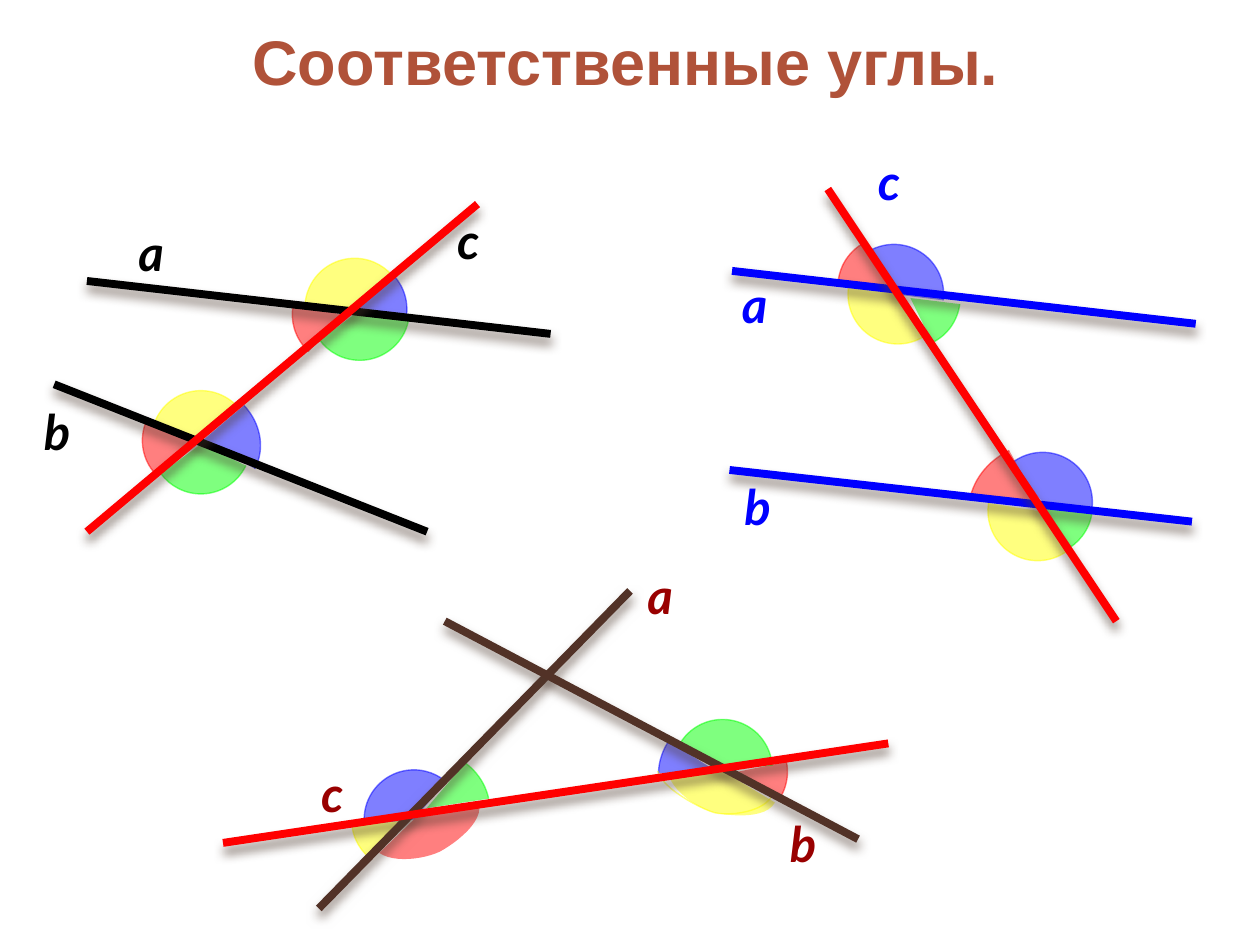
from lxml.etree import SubElement
from pptx import Presentation
from pptx.dml.color import RGBColor
from pptx.enum.shapes import MSO_CONNECTOR as CONNECTOR, MSO_SHAPE as SHAPE
from pptx.enum.text import MSO_ANCHOR as ANCHOR, MSO_AUTO_SIZE as AUTO_SIZE, PP_ALIGN as ALIGN
from pptx.oxml.ns import qn
from pptx.util import Inches, Pt

COLORS = {
    "title": "B05239", "shadow": "4E3B30", "black": "000000", "red": "FF0000",
    "blue": "0000FF", "green": "00FF00", "yellow": "FFFF00",
    "brown": "523227", "maroon": "990000",
}
LABEL_FONT = {"name": "Lato", "size": Pt(28), "bold": True, "italic": True}
TITLE_FONT = {"name": "Arial", "size": Pt(36), "bold": True, "italic": False}
WEDGE = 0.79  # usual diameter of an angle mark


def color(name):
    return RGBColor.from_string(COLORS[name])


def curve(start, *segments, steps=12):
    """Points along a chain of cubic Bezier segments."""
    points = [start]
    for first, second, end in segments:
        origin = points[-1]
        for step in range(1, steps + 1):
            t = step / steps
            weights = ((1 - t) ** 3, 3 * t * (1 - t) ** 2, 3 * t * t * (1 - t), t ** 3)
            corners = (origin, first, second, end)
            points.append(tuple(sum(w * c[axis] for w, c in zip(weights, corners))
                                for axis in (0, 1)))
    return points


class AngleSlide:
    def __init__(self, presentation):
        self.slide = presentation.slides.add_slide(presentation.slide_layouts[5])
        self.shapes = self.slide.shapes

    def format_text(self, frame, text, font, color_name):
        frame.text = text
        run = frame.paragraphs[0].runs[0]
        for name, value in font.items():
            setattr(run.font, name, value)
        run.font.color.rgb = color(color_name)

    def title(self, text, left, top, width, height):
        shape = self.shapes.title
        box = {"left": left, "top": top, "width": width, "height": height}
        for name, value in box.items():
            setattr(shape, name, Inches(value))
        frame = shape.text_frame
        self.format_text(frame, text, TITLE_FONT, "title")
        layout = {"word_wrap": False, "auto_size": AUTO_SIZE.NONE,
                  "vertical_anchor": ANCHOR.TOP}
        for name, value in layout.items():
            setattr(frame, name, value)
        frame.paragraphs[0].alignment = ALIGN.CENTER

    def make_translucent(self, shape):
        for element in list(shape._element.spPr.iter(qn("a:srgbClr"))):
            SubElement(element, qn("a:alpha"), val="50000")

    def wedge(self, color_name, left, top, rotation, start, end, width=WEDGE, height=WEDGE):
        shape = self.shapes.add_shape(SHAPE.ARC, Inches(left), Inches(top),
                                      Inches(width), Inches(height))
        shape.adjustments[0], shape.adjustments[1] = start, end
        shape.rotation = rotation
        shape.shadow.inherit = False
        shape.fill.solid()
        shape.fill.fore_color.rgb = color(color_name)
        shape.line.color.rgb = color(color_name)
        shape.line.width = Pt(0.79)
        self.make_translucent(shape)

    def freeform(self, color_name, points, filled=True):
        start, *others = [(Inches(x), Inches(y)) for x, y in points]
        builder = self.shapes.build_freeform(*start)
        builder.add_line_segments(others, close=filled)
        shape = builder.convert_to_shape()
        shape.shadow.inherit = False
        if filled:
            shape.fill.solid()
            shape.fill.fore_color.rgb = color(color_name)
            shape.line.fill.background()
        else:
            shape.fill.background()
            shape.line.color.rgb = color(color_name)
            shape.line.width = Pt(0.79)
        self.make_translucent(shape)

    def line(self, color_name, *ends):
        connector = self.shapes.add_connector(CONNECTOR.STRAIGHT, *map(Inches, ends))
        connector.line.color.rgb = color(color_name)
        connector.line.width = Pt(4.5)
        effects = SubElement(connector._element.spPr, qn("a:effectLst"))
        shadow = SubElement(effects, qn("a:outerShdw"), blurRad=str(Pt(6)), dist=str(Pt(4)),
                            dir="5400000", rotWithShape="0")
        tint = SubElement(shadow, qn("a:srgbClr"), val=COLORS["shadow"])
        SubElement(tint, qn("a:alpha"), val="60000")

    def label(self, text, color_name, left, top):
        width = 0.36 if text == "c" else 0.41
        shape = self.shapes.add_textbox(Inches(left), Inches(top), Inches(width), Inches(0.57))
        frame = shape.text_frame
        frame.word_wrap = False
        frame.auto_size = AUTO_SIZE.SHAPE_TO_FIT_TEXT
        self.format_text(frame, text, LABEL_FONT, color_name)


# Angle marks: colour, left, top, rotation, start, end, then any special size
WEDGES = [
    # bottom figure
    ("yellow", 2.79, 6.11, 186.2, 182.63, 208.23),
    ("red", 5.46, 5.73, 56.9, 175.02, 200.61),
    ("blue", 2.89, 6.11, 283.3, 150.57, 16.08),
    ("green", 5.34, 5.71, 317.2, 148.98, 23.23),
    ("blue", 5.24, 5.65, 227.8, 185.98, 206.59, 0.89, 0.94),
    ("green", 2.88, 5.95, 11.5, 179.52, 203.85, 1.01, 0.93),
    # right figure
    ("red", 6.65, 1.88, 264.8, 167.17, 201.64),
    ("blue", 6.7, 1.94, 348, 150.57, 11.49),
    ("yellow", 7.84, 3.66, 162.3, 150.57, 16.08),
    ("green", 7.88, 3.62, 97.2, 160.73, 196.03),
    ("blue", 7.88, 3.59, 335.7, 152.01, 17.9),
    ("yellow", 6.73, 1.94, 166.8, 151.64, 16.83),
    ("red", 7.75, 3.45, 254.9, 174.57, 207.77, 1.01, 1.14),
    ("green", 6.83, 1.97, 73.9, 175.87, 209.95),
    # left figure
    ("red", 1.13, 3.1, 206.1, 173.83, 215.17),
    ("green", 1.2, 3.13, 116.9, 161.21, 16.08),
    ("yellow", 2.42, 2.05, 292.6, 151.5, 16.08),
    ("blue", 2.44, 2.06, 20.4, 176.52, 208.03),
    ("blue", 1.14, 3.07, 32.4, 172.36, 213.79, 0.94, 0.85),
    ("red", 2.32, 2.1, 193.7, 178.82, 213.79),
    ("yellow", 1.2, 3.1, 297.9, 159.54, 9.95),
    ("green", 2.46, 2.07, 116.9, 150.57, 16.08),
]
RED_SECTOR = curve((3.8, 6.38), ((3.84, 6.52), (3.62, 6.69), (3.49, 6.76)),
                   ((3.36, 6.82), (3.13, 6.85), (3.01, 6.77))) + [(3.31, 6.48)]
YELLOW_SECTOR = curve((6.15, 6.37), ((6.08, 6.5), (5.81, 6.48), (5.67, 6.45)),
                      ((5.52, 6.41), (5.33, 6.27), (5.3, 6.13))) + [(5.72, 6.11)]
YELLOW_EDGE = curve((6.13, 6.31), ((6.07, 6.44), (5.81, 6.48), (5.67, 6.45)),
                    ((5.54, 6.41), (5.25, 6.25), (5.22, 6.12)))
# Lines a, b and the transversal c of each figure
LINES = [
    ("black", 0.69, 2.23, 4.37, 2.65),
    ("black", 0.43, 3.05, 3.39, 4.22),
    ("red", 0.69, 4.22, 3.79, 1.62),
    ("blue", 5.81, 2.15, 9.49, 2.57),
    ("blue", 5.79, 3.73, 9.46, 4.14),
    ("red", 6.57, 1.5, 8.86, 4.93),
    ("brown", 2.53, 7.21, 5, 4.69),
    ("brown", 3.53, 4.93, 6.81, 6.66),
    ("red", 1.77, 6.69, 7.05, 5.9),
]
# Places of the labels a, b, c of each figure
LABELS = {
    "black": [(1, 1.72), (0.25, 3.14), (3.53, 1.62)],
    "blue": [(5.79, 2.13), (5.81, 3.73), (6.87, 1.15)],
    "maroon": [(5.04, 4.44), (6.17, 6.41), (2.45, 6.01)],
}


def main():
    presentation = Presentation()
    presentation.slide_width, presentation.slide_height = Inches(10), Inches(7.5)
    page = AngleSlide(presentation)
    page.title("Соответственные углы.", 0.2, 0.13, 9.53, 0.78)

    # Coloured angles
    for wedge in WEDGES:
        page.wedge(*wedge)
    page.freeform("red", RED_SECTOR)
    page.freeform("yellow", YELLOW_SECTOR)
    page.freeform("yellow", YELLOW_EDGE, filled=False)

    # Lines and their names
    for line in LINES:
        page.line(*line)
    for color_name, places in LABELS.items():
        for text, place in zip("abc", places):
            page.label(text, color_name, *place)

    presentation.save("out.pptx")


if __name__ == "__main__":
    main()
